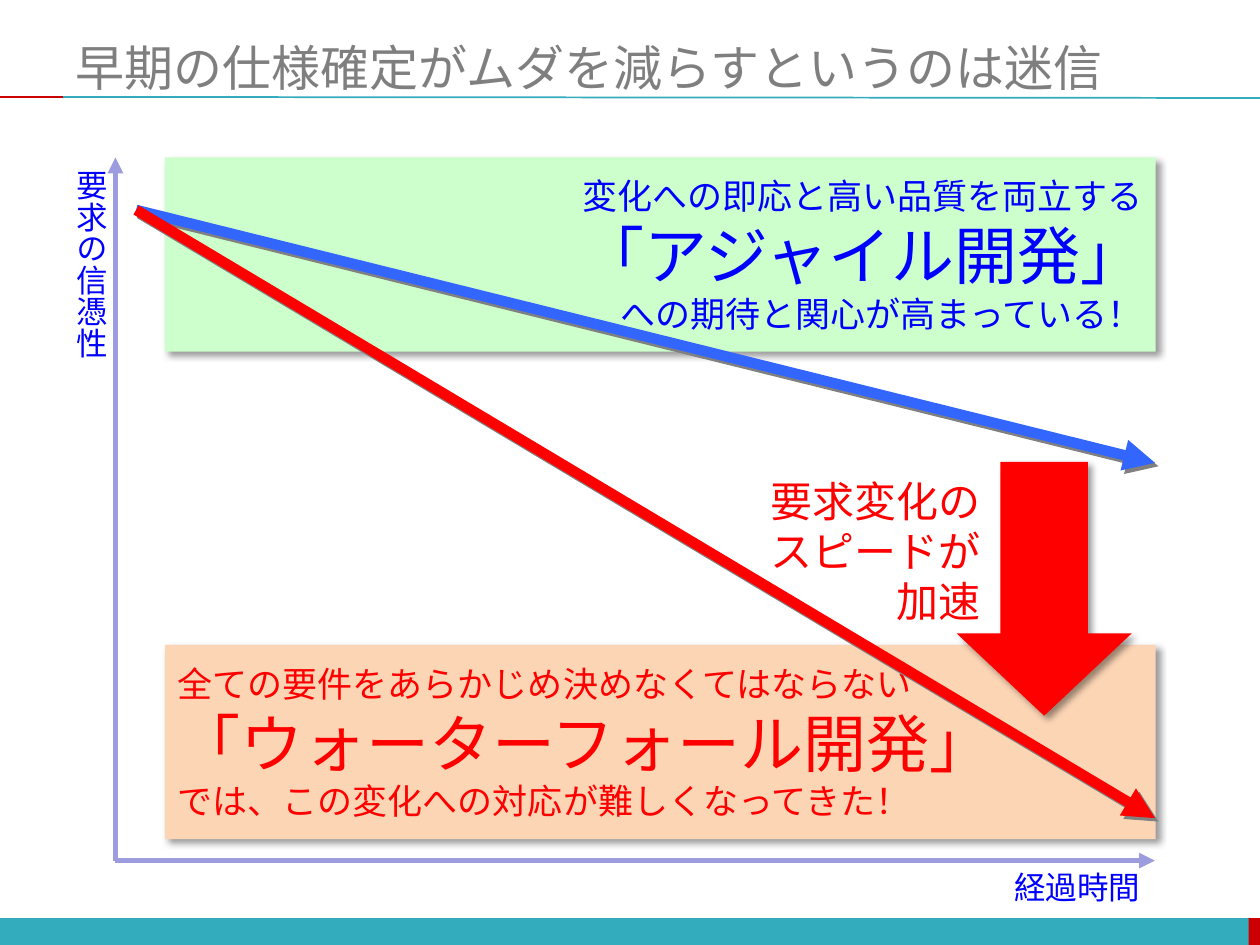
from lxml import etree
from pptx import Presentation
from pptx.dml.color import RGBColor
from pptx.enum import shapes as sh, text as tx
from pptx.oxml.ns import qn
from pptx.util import Pt

TEAL, CRIMSON, GREY = "33ACBD", "CC0000", "7F7F7F"
RED, BLUE, AXIS = "FF0000", "0000FF", "9C9CDF"
SOFT = ("000000", 40, 4, 3)
HARD = ("808080", 100, 0, 2.8)
LEFT, RIGHT = tx.PP_ALIGN.LEFT, tx.PP_ALIGN.RIGHT
FORM = sh.MSO_SHAPE


def color(code):
    return RGBColor.from_string(code)


class Deck:
    font = "Calibri"

    def __init__(self, slide):
        self.slide = slide

    def letter(self, frame, lines, tone, align=LEFT):
        """Fill a frame with (text, size) lines."""
        for i, (words, size) in enumerate(lines):
            para = frame.paragraphs[0] if i == 0 else frame.add_paragraph()
            para.alignment = align
            run = para.add_run()
            run.text = words
            run.font.name = self.font
            run.font.size = Pt(size)
            run.font.color.rgb = color(tone)

    def shade(self, shape, style=None):
        """Set the shadow, or none, of a shape or line."""
        props = shape._element.spPr
        for old in props.findall(qn("a:effectLst")):
            props.remove(old)
        group = etree.SubElement(props, qn("a:effectLst"))
        if style:
            tone, alpha, blur, dist = style
            drop = etree.SubElement(
                group, qn("a:outerShdw"), blurRad=str(Pt(blur)),
                dist=str(Pt(dist)), dir="2700000", algn="tl", rotWithShape="0")
            tint = etree.SubElement(drop, qn("a:srgbClr"), val=tone)
            etree.SubElement(tint, qn("a:alpha"), val=str(alpha * 1000))

    def title(self, words, x, y, w, h):
        box = self.slide.shapes.title
        box.left, box.top, box.width, box.height = Pt(x), Pt(y), Pt(w), Pt(h)
        frame = box.text_frame
        frame.auto_size = tx.MSO_AUTO_SIZE.NONE
        frame.vertical_anchor = tx.MSO_ANCHOR.MIDDLE
        self.letter(frame, [(words, 28)], GREY)

    def shape(self, form, x, y, w, h, fill, shadow=None):
        item = self.slide.shapes.add_shape(form, Pt(x), Pt(y), Pt(w), Pt(h))
        item.shadow.inherit = False
        item.fill.solid()
        item.fill.fore_color.rgb = color(fill)
        item.line.fill.background()
        if shadow:
            self.shade(item, shadow)
        return item

    def panel(self, y, fill, lines, tone, align):
        item = self.shape(FORM.ROUNDED_RECTANGLE, 94.3, y, 566, 111, fill, SOFT)
        item.adjustments[0] = 0
        item.text_frame.vertical_anchor = tx.MSO_ANCHOR.MIDDLE
        self.letter(item.text_frame, lines, tone, align)

    def label(self, x, y, w, h, lines, tone, align=LEFT, upright=False):
        box = self.slide.shapes.add_textbox(Pt(x), Pt(y), Pt(w), Pt(h))
        frame = box.text_frame
        frame.word_wrap = False
        frame.auto_size = tx.MSO_AUTO_SIZE.SHAPE_TO_FIT_TEXT
        if upright:
            frame._txBody.bodyPr.set("vert", "eaVert")
        self.letter(frame, lines, tone, align)

    def line(self, start, end, tone, width, head=True, shadow=None):
        item = self.slide.shapes.add_connector(
            sh.MSO_CONNECTOR.STRAIGHT, *map(Pt, start + end))
        item.line.color.rgb = color(tone)
        item.line.width = Pt(width)
        if head:
            etree.SubElement(item.line._get_or_add_ln(),
                             qn("a:tailEnd"), type="triangle")
        self.shade(item, shadow)


def main():
    prs = Presentation()
    prs.slide_width, prs.slide_height = Pt(720), Pt(540)
    deck = Deck(prs.slides.add_slide(prs.slide_layouts[5]))

    # Footer band and title rule
    deck.shape(FORM.RECTANGLE, 0, 524.7, 720, 15.5, TEAL)
    deck.shape(FORM.RECTANGLE, 713.5, 524.7, 6.5, 15.5, CRIMSON)
    deck.line((36, 55.4), (720, 56), TEAL, 1, head=False)
    deck.line((0, 55.4), (36, 55.4), CRIMSON, 1, head=False)
    deck.title("早期の仕様確定がムダを減らすというのは迷信", 36, 21.6, 684, 33)

    # Waterfall panel
    deck.panel(368.6, "FCD5B5", [
        ("全ての要件をあらかじめ決めなくてはならない", 20),
        ("「ウォーターフォール開発」", 36),
        ("では、この変化への対応が難しくなってきた！", 20)], RED, LEFT)

    # Axes
    origin = (66, 491.8)
    deck.line(origin, (66, 90), AXIS, 3)
    deck.line(origin, (660, 491.8), AXIS, 3)
    deck.label(572.5, 492.5, 87, 29, [("経過時間", 18)], BLUE)
    deck.label(30.3, 90, 36, 117, [("要求の信憑性", 18)], BLUE, upright=True)

    # Agile panel
    deck.panel(90, "CCFFCC", [
        ("変化への即応と高い品質を両立する", 20),
        ("「アジャイル開発」", 36),
        ("への期待と関心が高まっている！", 20)], BLUE, RIGHT)

    # Falling trends and the gap between them
    start = (77.8, 120)
    deck.line(start, (660, 264.5), "3366FF", 6, shadow=HARD)
    deck.label(431.3, 268, 136, 94.5, [
        ("要求変化の", 24), ("スピードが", 24), ("加速", 24)], RED, RIGHT)
    drop = deck.shape(FORM.DOWN_ARROW, 546.7, 264, 100, 145, RED, SOFT)
    drop.adjustments[0], drop.adjustments[1] = 0.5, 0.47
    deck.line(start, (660, 467.5), RED, 6, shadow=HARD)

    prs.save("out.pptx")


if __name__ == "__main__":
    main()
